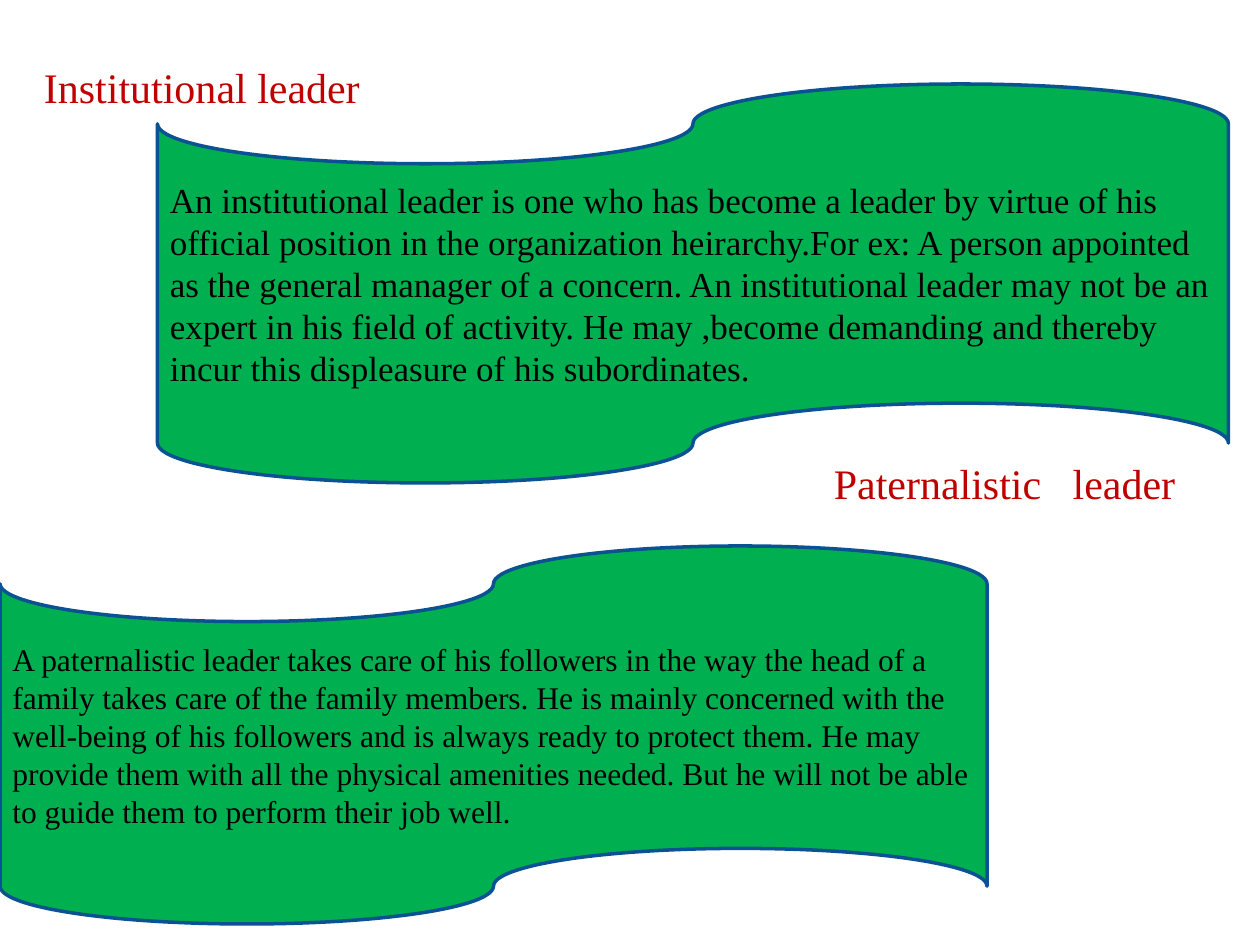
from dataclasses import dataclass

import pptx
import pptx.dml.color
import pptx.enum.shapes
import pptx.enum.text
import pptx.oxml
import pptx.oxml.ns
import pptx.util

Pt = pptx.util.Pt
RGB = pptx.dml.color.RGBColor
RED = RGB(0xC0, 0x00, 0x00)
GREEN = RGB(0x00, 0xB0, 0x50)
BLUE = RGB(0x0B, 0x52, 0x92)
BLACK = RGB(0x00, 0x00, 0x00)
FACE = "Times New Roman"


@dataclass
class Box:
    left: float
    top: float
    width: float
    height: float
    text: str
    size: float

    def place(self) -> tuple:
        return Pt(self.left), Pt(self.top), Pt(self.width), Pt(self.height)


@dataclass
class Title(Box):
    inset: float = 7.2
    tab: float = 0


TITLES = [
    Title(18, 31.7, 312, 36, "Institutional leader", 24),
    Title(354, 257.8, 366, 36, "Paternalistic\tleader", 24,
          inset=122.5, tab=136.5),
]

TAPES = [
    Box(90, 48, 612, 228,
        "An institutional leader is one who has become a leader by virtue of "
        "his official position in the organization heirarchy.For ex: A person "
        "appointed as the general manager of a concern. An institutional "
        "leader may not be an expert in his field of activity. He may ,become "
        "demanding and thereby incur this displeasure of his subordinates.",
        20),
    Box(0, 312, 564, 216,
        "A paternalistic leader takes care of his followers in the way the "
        "head of a family takes care of the family members. He is mainly "
        "concerned with the well-being of his followers and is always ready "
        "to protect them. He may provide them with all the physical amenities "
        "needed. But he will not be able to guide them to perform their job "
        "well.",
        18),
]


def write(frame, box: Box, color: RGB, tab: float = 0) -> None:
    frame.word_wrap = True
    frame.text = box.text
    para = frame.paragraphs[0]
    para.alignment = pptx.enum.text.PP_ALIGN.LEFT
    if tab:
        props = para._p.get_or_add_pPr()
        stops = pptx.oxml.parse_xml(
            f'<a:tabLst {pptx.oxml.ns.nsdecls("a")}>'
            f'<a:tab pos="{int(Pt(tab))}" algn="l"/></a:tabLst>')
        props.append(stops)
    para.font.name = FACE
    para.font.size = Pt(box.size)
    para.font.color.rgb = color


def add_title(slide, title: Title) -> None:
    frame = slide.shapes.add_textbox(*title.place()).text_frame
    frame.margin_left = Pt(title.inset)
    write(frame, title, RED, title.tab)
    frame.auto_size = pptx.enum.text.MSO_AUTO_SIZE.SHAPE_TO_FIT_TEXT


def add_tape(slide, tape: Box) -> None:
    kind = pptx.enum.shapes.MSO_SHAPE.FLOWCHART_PUNCHED_TAPE
    shape = slide.shapes.add_shape(kind, *tape.place())
    shape.shadow.inherit = False
    shape.fill.solid()
    shape.fill.fore_color.rgb = GREEN
    shape.line.color.rgb = BLUE
    shape.line.width = Pt(2)
    shape.text_frame.vertical_anchor = pptx.enum.text.MSO_ANCHOR.MIDDLE
    write(shape.text_frame, tape, BLACK)


def main() -> None:
    deck = pptx.Presentation()
    deck.slide_width, deck.slide_height = Pt(720), Pt(540)
    slide = deck.slides.add_slide(deck.slide_layouts[6])

    # Each kind of leader: heading, then description
    for title, tape in zip(TITLES, TAPES):
        add_title(slide, title)
        add_tape(slide, tape)

    deck.save("out.pptx")


if __name__ == "__main__":
    main()
